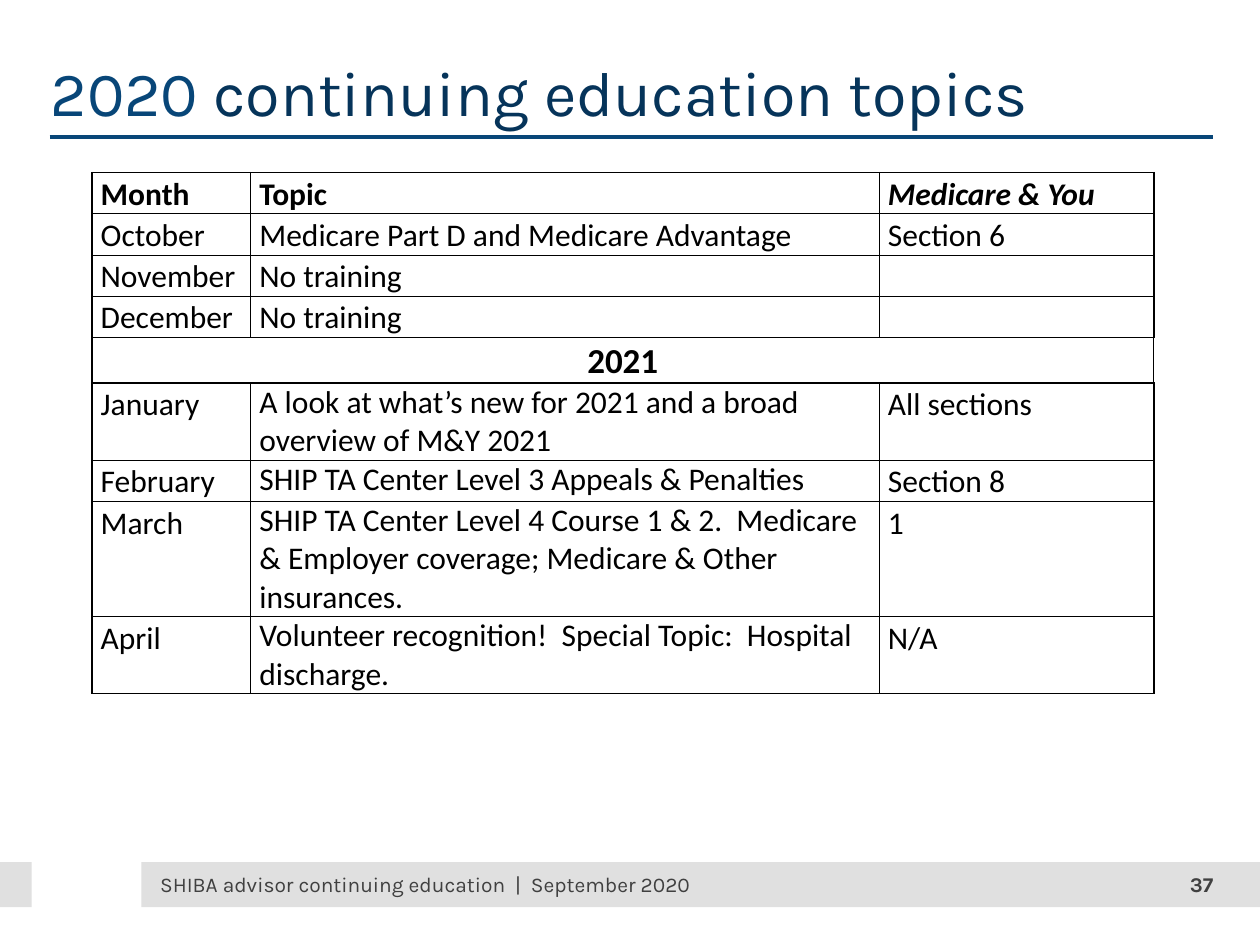
import pptx
import pptx.util
import pptx.dml.color
import pptx.enum.shapes
import pptx.enum.text
import pptx.oxml
from lxml import etree

Cm, Pt = pptx.util.Cm, pptx.util.Pt
Align = pptx.enum.text.PP_ALIGN
Anchor = pptx.enum.text.MSO_ANCHOR
Kind = pptx.enum.shapes.MSO_SHAPE
hues = {"blue": "084678", "navy": "06345A", "band": "E0E0E0",
        "gray": "404040", "black": "000000"}


def style(run, face, size, hue, bold=False):
    run.font.name, run.font.size, run.font.bold = face, Pt(size), bold
    run.font.color.rgb = pptx.dml.color.RGBColor.from_string(hues[hue])


def edge(cell, side, width):
    ns = pptx.oxml.ns.qn
    line = etree.SubElement(cell._tc.get_or_add_tcPr(), ns("a:" + side), w=str(Pt(width)))
    fill = etree.SubElement(line, ns("a:solidFill"))
    etree.SubElement(fill, ns("a:srgbClr"), val=hues["black"])


deck = pptx.Presentation()
deck.slide_width, deck.slide_height = Cm(25.4), Cm(19.05)
slide = deck.slides.add_slide(deck.slide_layouts[5])
shapes = slide.shapes

# Footer band
for left, width in [(2.85, 22.55), (0, 0.64)]:
    band = shapes.add_shape(Kind.RECTANGLE, Cm(left), Cm(17.38), Cm(width), Cm(0.91))
    band.shadow.inherit = False
    band.fill.solid()
    band.fill.fore_color.rgb = pptx.dml.color.RGBColor.from_string(hues["band"])
    band.line.fill.background()

# Rule under the title
rule = shapes.add_connector(pptx.enum.shapes.MSO_CONNECTOR.STRAIGHT,
                            Cm(1), Cm(2.76), Cm(24.45), Cm(2.76))
rule.line.width = Pt(2)
rule.line.color.rgb = pptx.dml.color.RGBColor.from_string(hues["blue"])
etree.SubElement(rule._element.spPr, pptx.oxml.ns.qn("a:effectLst"))

# Title
title = shapes.title
title.left, title.top, title.width, title.height = Cm(1.02), Cm(1.02), Cm(24.4), Cm(1.85)
frame = title.text_frame
frame.margin_left = frame.margin_right = frame.margin_top = frame.margin_bottom = 0
frame.vertical_anchor = Anchor.MIDDLE
para = frame.paragraphs[0]
para.alignment, para.line_spacing = Align.LEFT, 0.9
for words, hue in [("2020 ", "blue"), ("continuing education topics", "navy")]:
    run = para.add_run()
    run.text = words
    style(run, "Karla", 36, hue)

# Topic table
rows = [
    ("Month", "Topic", "Medicare & You"),
    ("October", "Medicare Part D and Medicare Advantage", "Section 6"),
    ("November", "No training", ""),
    ("December", "No training", ""),
    ("2021", "", ""),
    ("January", "A look at what’s new for 2021 and a broad overview of M&Y 2021", "All sections"),
    ("February", "SHIP TA Center Level 3 Appeals & Penalties", "Section 8"),
    ("March", "SHIP TA Center Level 4 Course 1 & 2.  Medicare & Employer coverage; "
              "Medicare & Other insurances.", "1"),
    ("April", "Volunteer recognition!  Special Topic:  Hospital discharge.", "N/A"),
]
year = 4
thick = {0, year, year + 1, 7, len(rows)}  # heavy lines, counted from the top
table = shapes.add_table(len(rows), 3, Cm(1.85), Cm(3.48), Cm(21.41), Cm(10.31)).table
table.first_row = table.horz_banding = False
for col, width in zip(table.columns, (3.2, 12.67, 5.54)):
    col.width = Cm(width)
for r, row in enumerate(rows):
    table.rows[r].height = Cm(0.61 if r == 0 else 0.56)
    for c, words in enumerate(row):
        cell = table.cell(r, c)
        cell.margin_left = cell.margin_right = Cm(0.18)
        cell.margin_top = cell.margin_bottom = 0
        edge(cell, "lnL", 1 if c == 0 else 0.5)
        edge(cell, "lnR", 1 if c == 2 else 0.5)
        edge(cell, "lnT", 1 if r in thick else 0.5)
        edge(cell, "lnB", 1 if r + 1 in thick else 0.5)
        cell.fill.background()
        para = cell.text_frame.paragraphs[0]
        para.text = words
        para.line_spacing = 1 if r > year and c == 1 else 1.07
        para.font.size = Pt(18)
        for run in para.runs:
            style(run, "Calibri", 20 if r == year else 18, "black", r in (0, year))
            run.font.italic = (r, c) == (0, 2)
table.cell(year, 0).merge(table.cell(year, 2))
table.cell(year, 0).text_frame.paragraphs[0].alignment = Align.CENTER

# Footer text and page number
for words, left, width, side, bold in [
        ("SHIBA advisor continuing education  |  September 2020", 3.23, 12.73, Align.LEFT, False),
        ("37", 22.68, 1.78, Align.RIGHT, True)]:
    frame = shapes.add_textbox(Cm(left), Cm(17.55), Cm(width), Cm(0.56)).text_frame
    frame.word_wrap = True
    frame.margin_left = frame.margin_right = frame.margin_top = frame.margin_bottom = 0
    frame.vertical_anchor = Anchor.MIDDLE
    frame.text = words
    frame.paragraphs[0].alignment = side
    style(frame.paragraphs[0].runs[0], "Karla", 12, "gray", bold)

deck.save("out.pptx")
